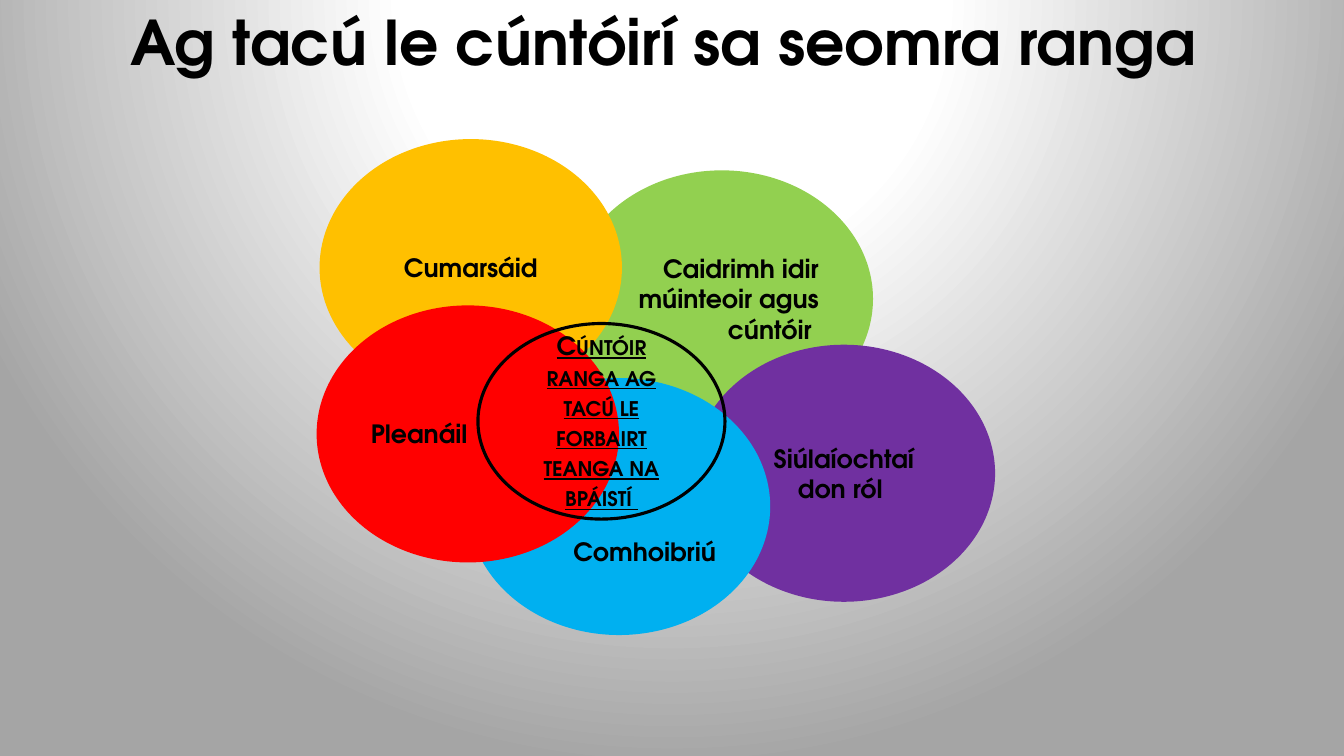
from dataclasses import dataclass

from pptx import Presentation
from pptx.dml.color import RGBColor
from pptx.enum.shapes import MSO_SHAPE
from pptx.enum.text import MSO_ANCHOR, MSO_AUTO_SIZE, PP_ALIGN
from pptx.oxml import parse_xml
from pptx.oxml.ns import nsdecls, qn
from pptx.slide import Slide
from pptx.text.text import TextFrame
from pptx.util import Inches, Pt

SLIDE_W, SLIDE_H = Inches(13.33), Inches(7.5)
FONT = "TeX Gyre Adventor"
ELLIPSE = MSO_SHAPE.OVAL
MIDDLE = MSO_ANCHOR.MIDDLE
NO_AUTOFIT = MSO_AUTO_SIZE.NONE
LEFT, CENTER, RIGHT = PP_ALIGN.LEFT, PP_ALIGN.CENTER, PP_ALIGN.RIGHT

BLACK = RGBColor(0x00, 0x00, 0x00)
WHITE = RGBColor(0xFF, 0xFF, 0xFF)
GREY = RGBColor(0xA5, 0xA5, 0xA5)
GREEN = RGBColor(0x92, 0xD0, 0x50)
AMBER = RGBColor(0xFF, 0xC0, 0x00)
PURPLE = RGBColor(0x70, 0x30, 0xA0)
BLUE = RGBColor(0x00, 0xB0, 0xF0)
RED = RGBColor(0xFF, 0x00, 0x00)

BACKDROP_STOPS = ((0, WHITE), (35, WHITE), (100, GREY))


@dataclass(frozen=True)
class Bubble:
    """An ellipse; lengths are percentages of the slide's width or height."""
    label: str
    left: float
    top: float
    fill: RGBColor | None = None
    width: float = 22.5
    height: float = 34
    align: PP_ALIGN = CENTER
    label_drop: float = 0
    emphasis: bool = False


BUBBLES = (
    Bubble("Caidrimh idir múinteoir agus cúntóir ", 42.46, 22.53, GREEN, align=RIGHT),
    Bubble("Cumarsáid", 23.78, 18.4, AMBER),
    Bubble("Siúlaíochtaí don ról ", 51.54, 45.6, PURPLE),
    Bubble("Comhoibriú", 34.81, 50, BLUE, align=RIGHT, label_drop=12),
    Bubble("Pleanáil", 23.56, 40.4, RED, align=LEFT),
    Bubble("Cúntóir ranga ag tacú le forbairt teanga na bpáistí ", 35.56, 42.8,
           width=18.38, height=25.87, emphasis=True),
)


def across(percent: float) -> int:
    return round(SLIDE_W * percent / 100)


def down(percent: float) -> int:
    return round(SLIDE_H * percent / 100)


def write_text(frame: TextFrame, text: str, *, size: float = 18,
               align: PP_ALIGN = CENTER, spacing: float = 1,
               emphasis: bool = False) -> None:
    """Write one bold black paragraph; emphasis underlines it in small capitals."""
    frame.word_wrap = True
    frame.auto_size = NO_AUTOFIT
    frame.vertical_anchor = MIDDLE
    paragraph = frame.paragraphs[0]
    paragraph.alignment = align
    paragraph.line_spacing = spacing
    run = paragraph.add_run()
    run.text = text
    font = run.font
    font.name, font.size, font.bold = FONT, Pt(size), True
    font.color.rgb = BLACK
    if emphasis:
        font.underline = True
        run._r.get_or_add_rPr().set("cap", "small")


def paint_backdrop(slide: Slide) -> None:
    """Fill the background with a circular gradient centred above the slide."""
    slide.background.fill.gradient()
    linear = slide.element.find(".//" + qn("a:gradFill"))
    stops = "".join(f'<a:gs pos="{share * 1000}"><a:srgbClr val="{color}"/></a:gs>'
                    for share, color in BACKDROP_STOPS)
    circular = parse_xml(
        f'<a:gradFill {nsdecls("a")} rotWithShape="1"><a:gsLst>{stops}</a:gsLst>'
        '<a:path path="circle">'
        '<a:fillToRect l="50000" t="-80000" r="50000" b="180000"/>'
        '</a:path></a:gradFill>')
    linear.getparent().replace(linear, circular)


def add_heading(slide: Slide, text: str) -> None:
    heading = slide.shapes.title
    heading.left, heading.top = across(6.9), down(-3.6)
    heading.width, heading.height = across(86.27), down(19.33)
    write_text(heading.text_frame, text, size=44, spacing=0.9)


def draw_bubble(slide: Slide, bubble: Bubble) -> None:
    ellipse = slide.shapes.add_shape(
        ELLIPSE, across(bubble.left), down(bubble.top),
        across(bubble.width), down(bubble.height))
    ellipse.shadow.inherit = False
    if bubble.fill is None:
        ellipse.fill.background()
        ellipse.line.color.rgb = BLACK
        ellipse.line.width = Pt(2.25)
    else:
        ellipse.fill.solid()
        ellipse.fill.fore_color.rgb = bubble.fill
        ellipse.line.fill.background()
    frame = ellipse.text_frame
    frame.margin_top = frame.margin_bottom + down(bubble.label_drop)
    write_text(frame, bubble.label, align=bubble.align, emphasis=bubble.emphasis)


def main() -> None:
    deck = Presentation()
    deck.slide_width, deck.slide_height = SLIDE_W, SLIDE_H
    slide = deck.slides.add_slide(deck.slide_layouts.get_by_name("Title Only"))
    paint_backdrop(slide)
    add_heading(slide, "Ag tacú le cúntóirí sa seomra ranga ")
    for bubble in BUBBLES:
        draw_bubble(slide, bubble)
    deck.save("out.pptx")


if __name__ == "__main__":
    main()
